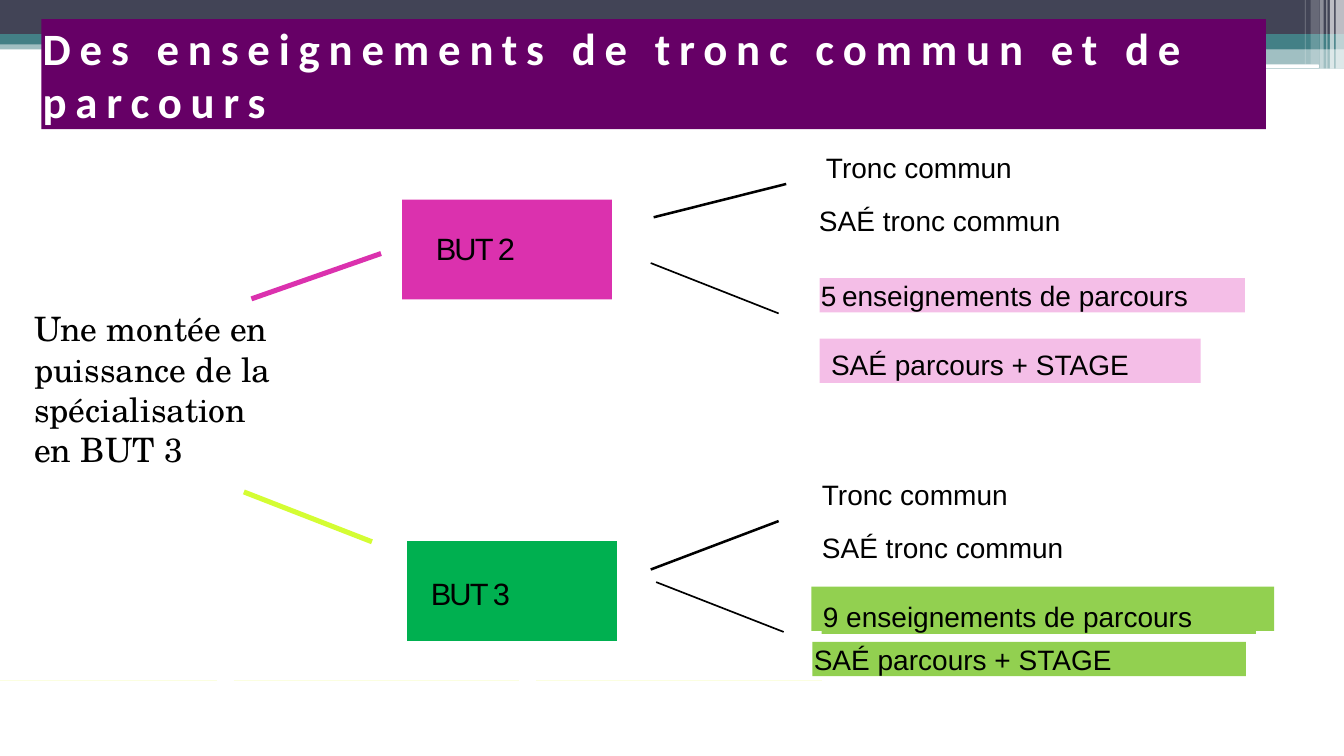
import pptx
import pptx.util
import pptx.dml.color
import pptx.enum.shapes
import pptx.enum.text
import pptx.oxml.ns
from lxml import etree

Pt = pptx.util.Pt
KIND = pptx.enum.shapes.MSO_SHAPE
ANCHOR = pptx.enum.text.MSO_ANCHOR
ALIGN = pptx.enum.text.PP_ALIGN
LINE = pptx.enum.shapes.MSO_CONNECTOR.STRAIGHT

HUES = {
    "navy": "424456", "teal": "438086", "white": "FFFFFF", "black": "000000",
    "plum": "660066", "pink": "DB31AE", "rose": "F4BEE7", "lime": "D4FD33",
    "green": "00B050", "leaf": "92D050", "pale": "FBFEE0",
}
LABEL = {"size": Pt(20), "name": "Arial"}
CARD = {"size": Pt(22), "name": "Arial"}
TITLE = {"size": Pt(32), "name": "Calibri", "bold": True}
THEME = {"size": Pt(24), "name": "TeX Gyre Schola"}


def color(key):
    """Return the named colour."""
    return pptx.dml.color.RGBColor.from_string(HUES[key])


def block(slide, box, fill=None, alpha=100, kind=KIND.RECTANGLE):
    """Draw a borderless block, filled when a colour is named."""
    shape = slide.shapes.add_shape(kind, *map(Pt, box))
    shape.shadow.inherit = False
    shape.line.fill.background()
    if fill is None:
        shape.fill.background()
        return shape
    shape.fill.solid()
    shape.fill.fore_color.rgb = color(fill)
    if alpha < 100:
        hue = shape.fill._xPr.find(".//" + pptx.oxml.ns.qn("a:srgbClr"))
        etree.SubElement(hue, pptx.oxml.ns.qn("a:alpha"), val=str(alpha * 1000))
    return shape


def write(shape, runs, font, inset=(1, 0), hue="black", track=0, anchor=ANCHOR.TOP):
    """Write (text, size) runs, inset from the shape's left and top."""
    frame = shape.text_frame
    form = {"word_wrap": True, "vertical_anchor": anchor, "margin_left": Pt(inset[0]),
            "margin_top": Pt(inset[1]), "margin_right": 0, "margin_bottom": 0}
    for name, value in form.items():
        setattr(frame, name, value)
    para = frame.paragraphs[0]
    para.alignment = ALIGN.LEFT
    for text, size in runs:
        run = para.add_run()
        run.text = text
        for name, value in font.items():
            setattr(run.font, name, value)
        if size:
            run.font.size = Pt(size)
        run.font.color.rgb = color(hue)
        if track:
            run.font._element.set("spc", str(track))


def stroke(slide, ends, hue, width):
    """Draw a straight line between two points."""
    line = slide.shapes.add_connector(LINE, *map(Pt, ends))
    line.line.color.rgb = color(hue)
    line.line.width = Pt(width)
    etree.SubElement(line._element.spPr, pptx.oxml.ns.qn("a:effectLst"))


def header(slide, box):
    """Draw the top band with its stripes at the right end."""
    left, top, width, _ = box
    right = left + width
    for y, high, span, hue, alpha in [
        (28.8, 6.5, width, "teal", 50), (0, 24.5, width, "navy", 100),
        (24.5, 7.2, width, "teal", 100), (28, 7.2, 392, "teal", 100),
        (34.6, 14.4, 392, "teal", 50),
    ]:
        block(slide, (right - span, top + y, span, high), hue, alpha)
    block(slide, (right - 186, top + 46, 168, 2.6), "white", kind=KIND.ROUNDED_RECTANGLE)
    for back, wide, high, alpha in [
        (6, 6, 49, 65), (10, 3, 49, 65), (12.5, 0.7, 49, 60),
        (17.3, 2.9, 49, 40), (23.8, 5.8, 46, 20), (28, 0.7, 46, 30),
    ]:
        block(slide, (right - back, top, wide, high), "white", alpha)


def title(slide, box):
    """Place the title bar."""
    text = "Des enseignements de tronc commun et de parcours"
    write(block(slide, box, "plum"), [(text, None)], TITLE, hue="white", track=630,
          anchor=ANCHOR.MIDDLE)


def theme(slide, box):
    """Place the idea from which both branches start."""
    text = "Une montée en puissance de la spécialisation en BUT 3"
    write(block(slide, box, "white"), [(text, None)], THEME, inset=(7.2, 3.6))


def rules(slide, box):
    """Draw three pale hairlines along the foot."""
    left, top, width, _ = box
    for i in range(3):
        end = left + 155 + 216 * i
        stroke(slide, (max(left, end - 204), top, min(end, left + width), top), "pale", 0.5)


def branch(slide, box, year):
    """Draw one year: stem, card, two twigs and its labels."""
    left, top = box[:2]

    def shift(ends):
        """Move a pair of points into the box."""
        return [v + (left, top)[i % 2] for i, v in enumerate(ends)]

    stroke(slide, shift(year["stem"]), year["tint"], 3.6)
    x, y = year["card"]
    card = block(slide, (left + x, top + y, 149.8, 71.3), year["fill"])
    write(card, [(year["name"], None)], CARD, inset=year["inset"], track=-130)
    for ends, width in zip(year["twigs"], (1.8, 1.2)):
        stroke(slide, shift(ends), "black", width)
    for (x, y, wide, high), hue, inset, runs in year["rows"]:
        row = block(slide, (left + x, top + y, wide, high), hue)
        if runs:
            write(row, runs, LABEL, inset)


SECOND = {
    "name": "BUT 2", "fill": "pink", "tint": "pink", "card": (113.3, 35.6),
    "inset": (24, 21.6), "stem": (5.6, 106.5, 98.2, 74.1),
    "twigs": [(292.9, 48.2, 387.6, 24.4), (290.8, 80.9, 382.2, 116.9)],
    "rows": [
        ((415, 0.3, 236, 24.5), None, (1, 0), [("Tronc commun", None)]),
        ((410, 38.4, 236, 24.5), None, (1, 0), [("SAÉ tronc commun", None)]),
        ((411.4, 91.7, 303.8, 24.5), "rose", (1, 0),
         [("5", None), (" ", 14), ("enseignements de parcours", None)]),
        ((411.4, 134.9, 272.2, 31.7), "rose", (8.2, 6.5), [("SAÉ parcours + STAGE", None)]),
    ],
}
THIRD = {
    "name": "BUT 3", "fill": "green", "tint": "lime", "card": (116.9, 45.6),
    "inset": (16.8, 23.8), "stem": (0.2, 10.4, 91.7, 46),
    "twigs": [(290.8, 65.8, 382.2, 31.2), (294.7, 74.8, 385.8, 110.4)],
    "rows": [
        ((412.1, 0.3, 236, 24.5), None, (1, 0), [("Tronc commun", None)]),
        ((412.1, 37.7, 236, 24.5), None, (1, 0), [("SAÉ tronc commun", None)]),
        ((405.6, 78, 330.5, 31.7), "leaf", (0, 0), []),
        ((412.8, 87.4, 310.3, 24.5), "leaf", (1, 0), [("9 enseignements de parcours", None)]),
        ((406.3, 117.6, 309.6, 24.5), "leaf", (1, 0), [("SAÉ parcours + STAGE", None)]),
    ],
}


def main():
    """Build and save the slide."""
    deck = pptx.Presentation()
    deck.slide_width, deck.slide_height = Pt(960), Pt(540)
    slide = deck.slides.add_slide(deck.slide_layouts[6])
    header(slide, (0, 0, 960, 49))
    theme(slide, (17.3, 216.7, 191.5, 126.7))
    rules(slide, (0, 486, 960, 1))
    title(slide, (29.5, 13.7, 874.8, 78.5))
    branch(slide, (174, 107, 716, 167), SECOND)
    branch(slide, (174, 341, 737, 143), THIRD)
    deck.save("out.pptx")


if __name__ == "__main__":
    main()
